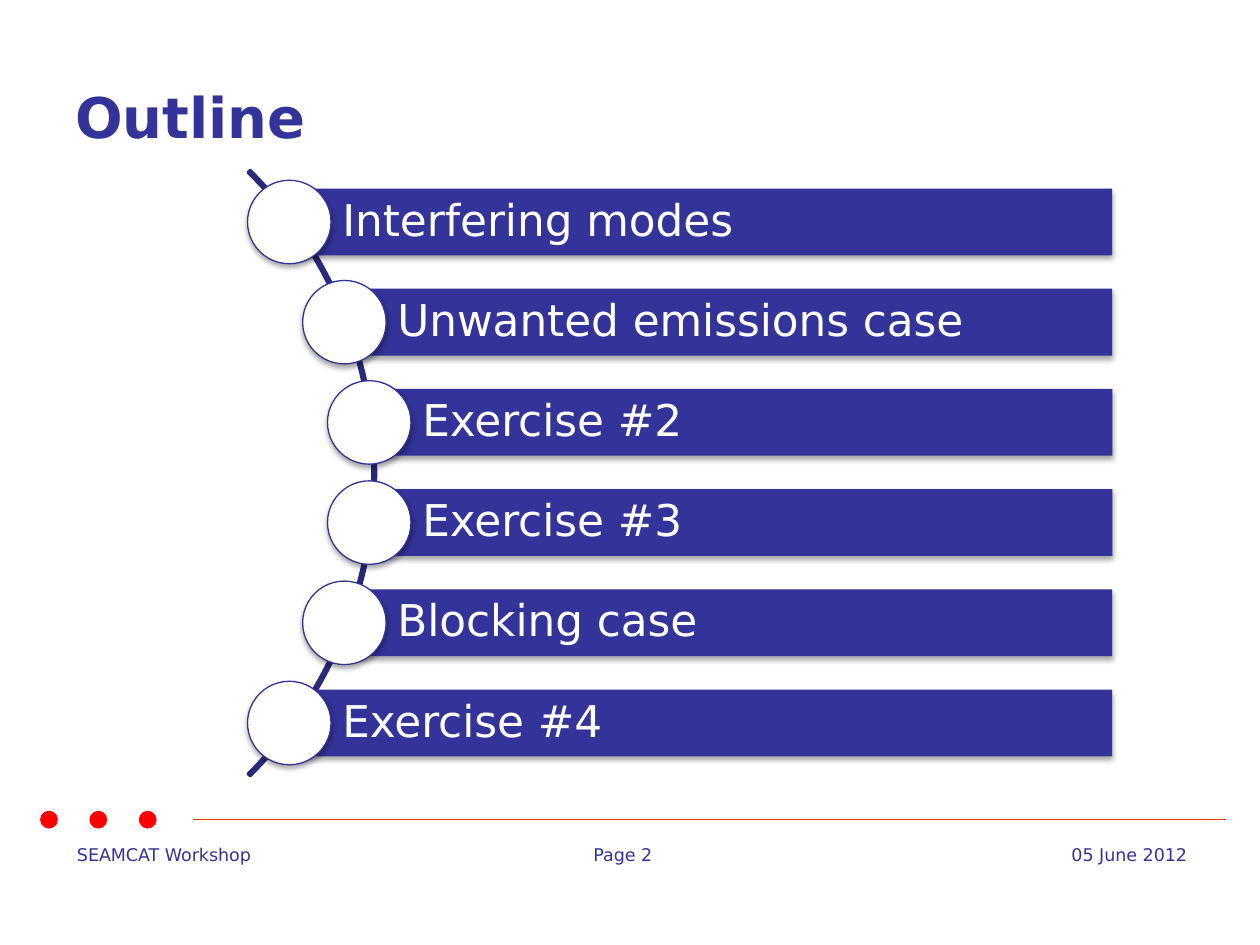
"""Build the outline slide with six topics set along an arc."""
from lxml import etree
from pptx import Presentation
from pptx.dml.color import RGBColor
from pptx.enum.shapes import MSO_CONNECTOR, MSO_SHAPE
from pptx.enum.text import MSO_ANCHOR, PP_ALIGN
from pptx.oxml import parse_xml
from pptx.oxml.ns import qn
from pptx.util import Pt

RECT, OVAL, ARC = MSO_SHAPE.RECTANGLE, MSO_SHAPE.OVAL, MSO_SHAPE.BLOCK_ARC
LINE = MSO_CONNECTOR.STRAIGHT
LEFT, RIGHT = PP_ALIGN.LEFT, PP_ALIGN.RIGHT
TOP, MIDDLE = MSO_ANCHOR.TOP, MSO_ANCHOR.MIDDLE
BLUE, NAVY, WHITE, RED, ORANGE = "333399", "29297B", "FFFFFF", "FF0000", "FF3300"
SHADOW = (
    '<a:effectLst xmlns:a="http://schemas.openxmlformats.org/drawingml/2006/main">'
    '<a:outerShdw blurRad="39400" dist="22900" dir="5400000" rotWithShape="0">'
    '<a:srgbClr val="000000"><a:alpha val="35000"/></a:srgbClr>'
    '</a:outerShdw></a:effectLst>'
)


def shape(kind, x, y, w, h, fill=None, edge=None, width=0.75, shade=False):
    item = slide.shapes.add_shape(kind, Pt(x), Pt(y), Pt(w), Pt(h))
    item.shadow.inherit = False
    if fill:
        item.fill.solid()
        item.fill.fore_color.rgb = RGBColor.from_string(fill)
    else:
        item.fill.background()
    if edge:
        item.line.color.rgb = RGBColor.from_string(edge)
        item.line.width = Pt(width)
    else:
        item.line.fill.background()
    if shade:
        props = item._element.spPr
        props.replace(props.find(qn("a:effectLst")), parse_xml(SHADOW))
    return item


def write(item, text, size, color, wrap=True, align=LEFT, anchor=TOP, bold=False):
    frame = item.text_frame
    frame.word_wrap = wrap
    frame.vertical_anchor = anchor
    para = frame.paragraphs[0]
    para.text = text
    para.alignment = align
    para.font.name = "DejaVu Sans"
    para.font.size = Pt(size)
    para.font.bold = bold
    para.font.color.rgb = RGBColor.from_string(color)
    return frame


deck = Presentation()
deck.slide_width, deck.slide_height = Pt(720), Pt(540)
slide = deck.slides.add_slide(deck.slide_layouts[6])

feet = [
    ("SEAMCAT Workshop", 36.9, 117.4, False, LEFT),
    ("Page 2", 332, 59, False, LEFT),
    ("05 June 2012", 544.3, 141.1, True, RIGHT),
]
for text, x, w, wrap, align in feet:
    box = slide.shapes.add_textbox(Pt(x), Pt(478.8), Pt(w), Pt(19.4))
    write(box, text, 10, BLUE, wrap, align)

rule = slide.shapes.add_connector(LINE, Pt(110.4), Pt(468.5), Pt(700.3), Pt(468.5))
rule.line.color.rgb = RGBColor.from_string(ORANGE)
rule.line.width = Pt(0.75)
etree.SubElement(rule._element.spPr, qn("a:effectLst"))

for i in range(3):
    shape(OVAL, 22.9 + 28.2 * i, 463.3, 10.2, 10.2, RED)

title = slide.shapes.add_textbox(Pt(36), Pt(21.6), Pt(648), Pt(90))
write(title, "Outline", 32, BLUE, anchor=MIDDLE, bold=True)

arc = shape(ARC, -274.3, 25.9, 488.9, 488.9, None, NAVY, 2)
for i, value in enumerate((189, 27, 0.003)):
    arc.adjustments[i] = value

topics = [
    ("Interfering modes", 165.3),
    ("Unwanted emissions case", 196.8),
    ("Exercise #2", 211),
    ("Exercise #3", 211),
    ("Blocking case", 196.8),
    ("Exercise #4", 165.3),
]
end, high, disc, step = 635.6, 38.2, 47.7, 57.26
for i, (text, x) in enumerate(topics):
    mid = 270 + step * (i - 2.5)
    bar = shape(RECT, x, mid - high / 2, end - x, high, BLUE, shade=True)
    frame = write(bar, text, 25, WHITE, anchor=MIDDLE)
    frame.margin_left = Pt(30.3)
    frame.margin_top = frame.margin_right = frame.margin_bottom = Pt(5)
    frame.paragraphs[0].line_spacing = 0.9
    shape(OVAL, x - disc / 2, mid - disc / 2, disc, disc, WHITE, BLUE, shade=True)

deck.save("out.pptx")
